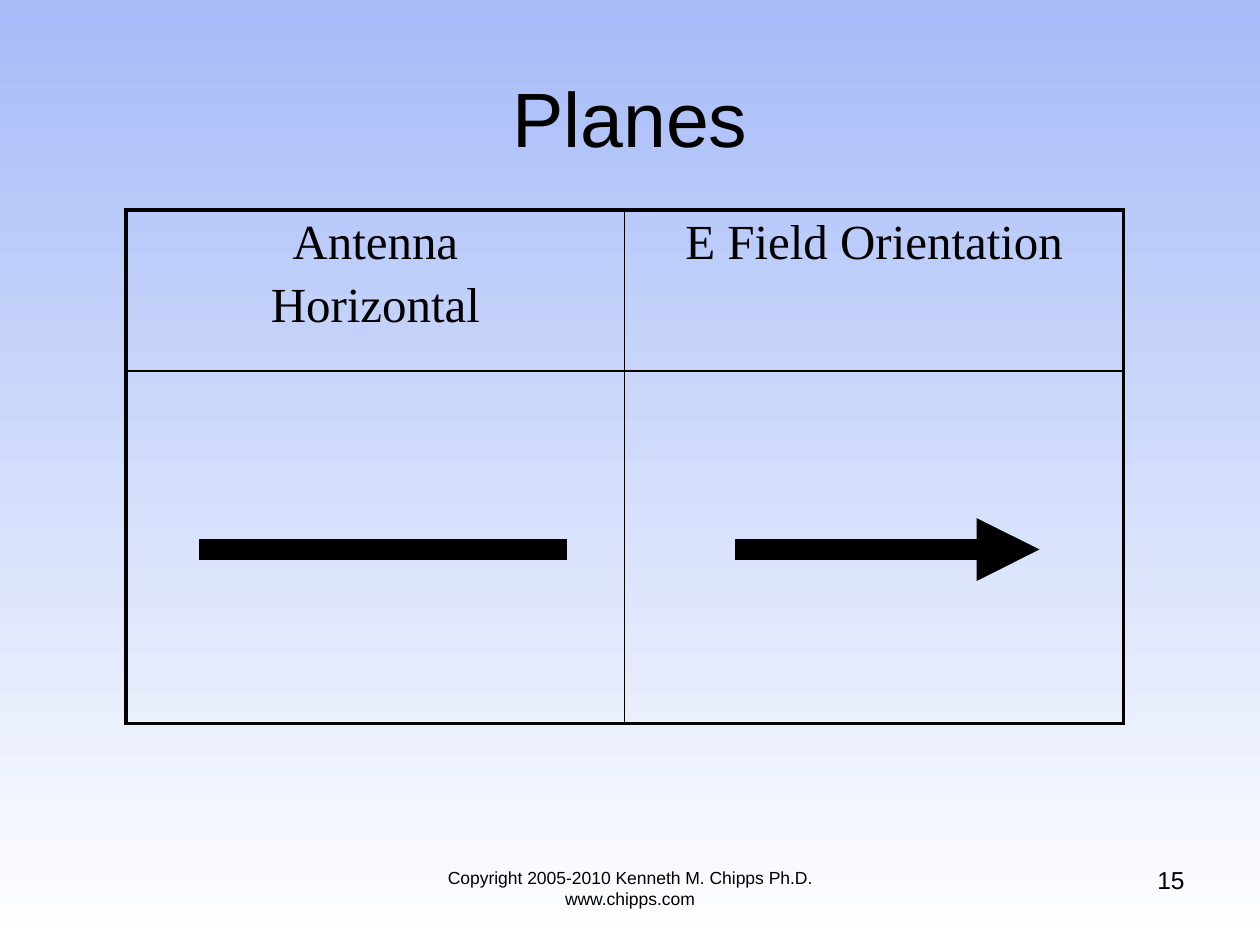
from dataclasses import dataclass

from lxml.etree import SubElement
from pptx import Presentation
from pptx.dml.color import RGBColor
from pptx.enum.shapes import MSO_CONNECTOR
from pptx.enum.text import MSO_ANCHOR, PP_ALIGN
from pptx.oxml.ns import qn
from pptx.util import Pt


@dataclass(frozen=True)
class Theme:
    ink: str = "000000"
    sky: str = "A6BBF8"
    base: str = "FFFFFF"
    sans: str = "Arial"
    serif: str = "Times New Roman"
    title: float = 44
    head: float = 28
    page: float = 14
    note: float = 10
    thin: float = 1
    thick: float = 2.25
    bar: float = 12


THEME = Theme()


def style(para, face, size, align):
    para.alignment = align
    para.font.name = face
    para.font.size = Pt(size)
    para.font.color.rgb = RGBColor.from_string(THEME.ink)


def add_text(slide, box, text, size, align, anchor=MSO_ANCHOR.TOP):
    frame = slide.shapes.add_textbox(*map(Pt, box)).text_frame
    frame.word_wrap = True
    frame.vertical_anchor = anchor
    frame.text = text
    style(frame.paragraphs[0], THEME.sans, size, align)


def add_edge(cell, side, width):
    props = cell._tc.get_or_add_tcPr()
    line = SubElement(props, qn(f"a:ln{side}"), w=str(Pt(width)))
    fill = SubElement(line, qn("a:solidFill"))
    SubElement(fill, qn("a:srgbClr"), val=THEME.ink)


def add_grid(slide, box, heads, rows):
    count = len(heads)
    table = slide.shapes.add_table(len(rows), count, *map(Pt, box)).table
    table.first_row = table.horz_banding = False
    for row, high in zip(table.rows, rows):
        row.height = Pt(high)
    for r in range(len(rows)):
        for c in range(count):
            cell = table.cell(r, c)
            # Thick outer frame, thin inner rules
            outer = {"L": c == 0, "R": c == count - 1,
                     "T": r == 0, "B": r == len(rows) - 1}
            for side, edge in outer.items():
                add_edge(cell, side, THEME.thick if edge else THEME.thin)
            cell.fill.background()
    for c, text in enumerate(heads):
        frame = table.cell(0, c).text_frame
        frame.text = text
        for para in frame.paragraphs:
            style(para, THEME.serif, THEME.head, PP_ALIGN.CENTER)
            para.space_before = Pt(4.5)


def add_bar(slide, left, right, y, arrow=False):
    bar = slide.shapes.add_connector(
        MSO_CONNECTOR.STRAIGHT, Pt(left), Pt(y), Pt(right), Pt(y))
    bar.line.width = Pt(THEME.bar)
    bar.line.color.rgb = RGBColor.from_string(THEME.ink)
    if arrow:
        SubElement(bar.line._get_or_add_ln(), qn("a:tailEnd"), type="triangle")
    SubElement(bar._element.spPr, qn("a:effectLst"))


def add_planes(slide, box):
    left, top, width, height = box
    add_grid(slide, box, ["Antenna\nHorizontal", "E Field Orientation"],
             [92, height - 92])
    # Antenna and its field direction
    mid = top + 194
    add_bar(slide, left + 42, left + 252, mid)
    add_bar(slide, left + 348, left + 522, mid, arrow=True)


def add_foot(slide, box):
    left, top, width, height = box
    add_text(slide, (left + 180, top + 1.5, 288, height),
             "Copyright 2005-2010 Kenneth M. Chipps Ph.D. www.chipps.com",
             THEME.note, PP_ALIGN.CENTER)
    add_text(slide, (left + width - 168, top, 168, height), "15",
             THEME.page, PP_ALIGN.RIGHT)


def add_back(slide):
    fill = slide.background.fill
    fill.gradient()
    fill.gradient_angle = 270
    for stop, tint in zip(fill.gradient_stops, (THEME.sky, THEME.base)):
        stop.color.rgb = RGBColor.from_string(tint)


def main():
    deck = Presentation()
    deck.slide_width, deck.slide_height = Pt(720), Pt(540)
    slide = deck.slides.add_slide(deck.slide_layouts[6])
    add_back(slide)
    add_text(slide, (36, 21.6, 648, 90), "Planes", THEME.title,
             PP_ALIGN.CENTER, MSO_ANCHOR.MIDDLE)
    add_planes(slide, (72, 120, 570, 293.5))
    add_foot(slide, (36, 490.5, 648, 37.5))
    deck.save("out.pptx")


if __name__ == "__main__":
    main()
